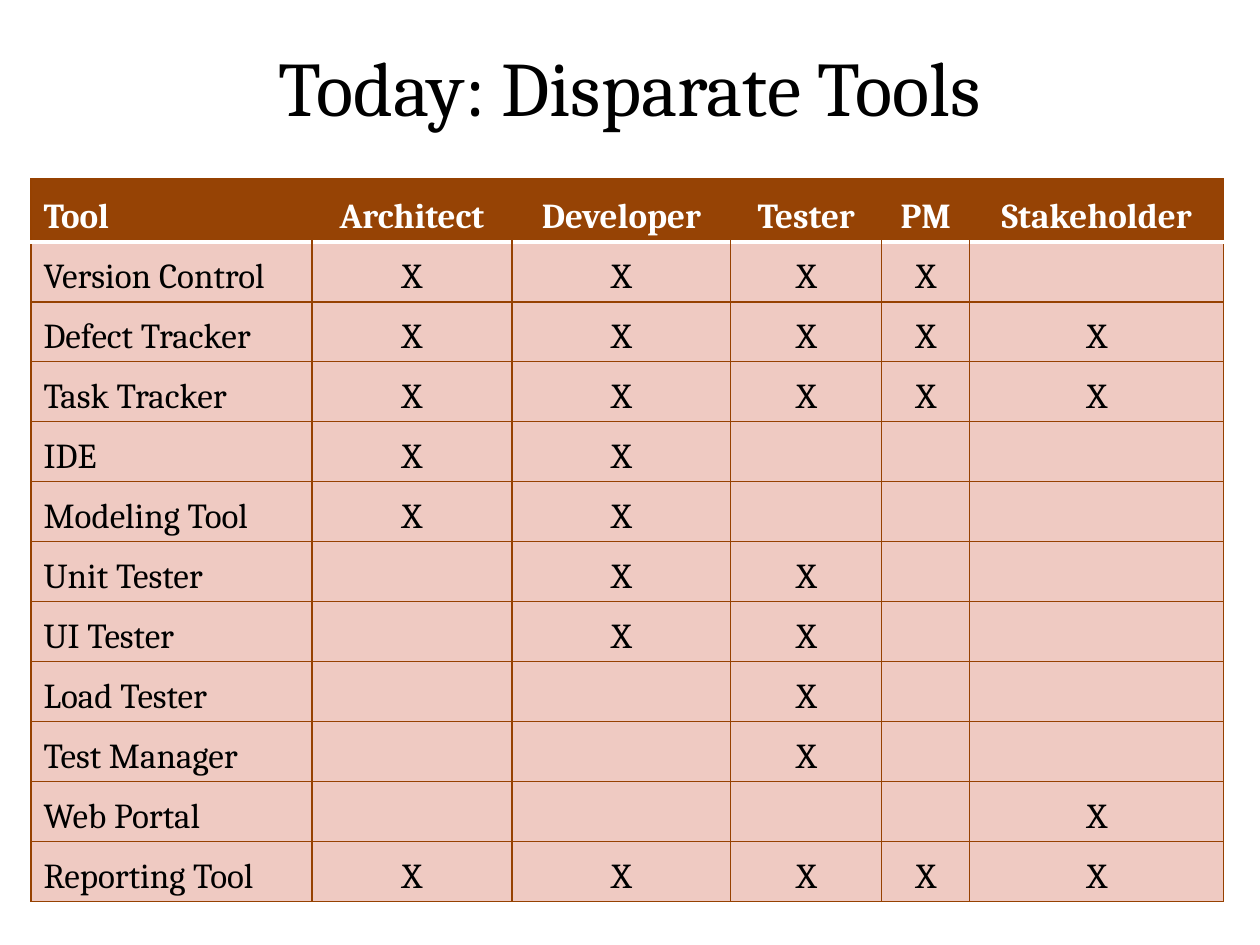
from pptx import Presentation
from pptx.dml.color import RGBColor
from pptx.enum.text import MSO_ANCHOR, PP_ALIGN
from pptx.oxml.ns import qn
from pptx.util import Emu, Pt
from lxml.etree import SubElement

TITLE = "Today: Disparate Tools"
ROLES = ["Architect", "Developer", "Tester", "PM", "Stakeholder"]
TOOLS = [
    ("Version Control", "XXXX-"),
    ("Defect Tracker", "XXXXX"),
    ("Task Tracker", "XXXXX"),
    ("IDE", "XX---"),
    ("Modeling Tool", "XX---"),
    ("Unit Tester", "-XX--"),
    ("UI Tester", "-XX--"),
    ("Load Tester", "--X--"),
    ("Test Manager", "--X--"),
    ("Web Portal", "----X"),
    ("Reporting Tool", "XXXXX"),
]
THEME = {
    "font": "Cambria", "title": 44, "body": 20,
    "ink": "000000", "light": "FFFFFF", "head": "964305",
    "cell": "EFCAC2", "line": "964101", "thin": 0.75, "thick": 2,
}
WIDTHS = [281, 200, 219, 151, 88, 254]
HEAD, ROW = 63, 60
LEFT, TOP = 31, 179


def px(n):
    return Emu(round(n * 914400 / 126))


def color(key):
    return RGBColor.from_string(THEME[key])


def write(frame, text, size, ink, align, bold=False, gap=1.0):
    par = frame.paragraphs[0]
    par.alignment = align
    par.line_spacing = gap
    if not text:
        return
    run = par.add_run()
    run.text = text
    font = run.font
    font.name, font.size, font.bold = THEME["font"], Pt(THEME[size]), bold
    font.color.rgb = color(ink)


def edge(cell, side, ink, width):
    props = cell._tc.get_or_add_tcPr()
    line = SubElement(props, qn("a:ln" + side), w=str(Pt(THEME[width])))
    if ink:
        fill = SubElement(line, qn("a:solidFill"))
        SubElement(fill, qn("a:srgbClr"), val=THEME[ink])
    else:
        SubElement(line, qn("a:noFill"))


def style(cell, row, col):
    head = row == 0
    last = len(WIDTHS) - 1
    edge(cell, "L", "line" if not head or col == 0 else None, "thin")
    edge(cell, "R", "line" if not head or col == last else None, "thin")
    edge(cell, "T", "light" if row == 1 else "line", "thick" if row == 1 else "thin")
    edge(cell, "B", "light" if head else "line", "thick" if head else "thin")
    cell.fill.solid()
    cell.fill.fore_color.rgb = color("head" if head else "cell")
    cell.vertical_anchor = MSO_ANCHOR.BOTTOM


def add_title(slide):
    box = slide.shapes.add_textbox(px(63), px(38), px(1134), px(158))
    frame = box.text_frame
    frame.word_wrap = True
    frame.vertical_anchor = MSO_ANCHOR.TOP
    frame.margin_top = px(2)
    write(frame, TITLE, "title", "ink", PP_ALIGN.CENTER)


def add_grid(slide):
    rows = [["Tool", *ROLES]]
    rows += [[name, *marks.replace("-", " ")] for name, marks in TOOLS]
    tall = [HEAD] + [ROW] * len(TOOLS)
    table = slide.shapes.add_table(
        len(rows), len(WIDTHS), px(LEFT), px(TOP), px(sum(WIDTHS)), px(sum(tall))
    ).table
    table.horz_banding = False
    for col, width in zip(table.columns, WIDTHS):
        col.width = px(width)
    for r, texts in enumerate(rows):
        table.rows[r].height = px(tall[r])
        for c, text in enumerate(texts):
            cell = table.cell(r, c)
            style(cell, r, c)
            align = PP_ALIGN.CENTER if c else PP_ALIGN.LEFT
            ink = "ink" if r else "light"
            write(cell.text_frame, text.strip(), "body", ink, align, r == 0, 0.9)


def main():
    deck = Presentation()
    deck.slide_width, deck.slide_height = px(1260), px(945)
    slide = deck.slides.add_slide(deck.slide_layouts[6])
    add_title(slide)
    add_grid(slide)
    deck.save("out.pptx")


if __name__ == "__main__":
    main()
